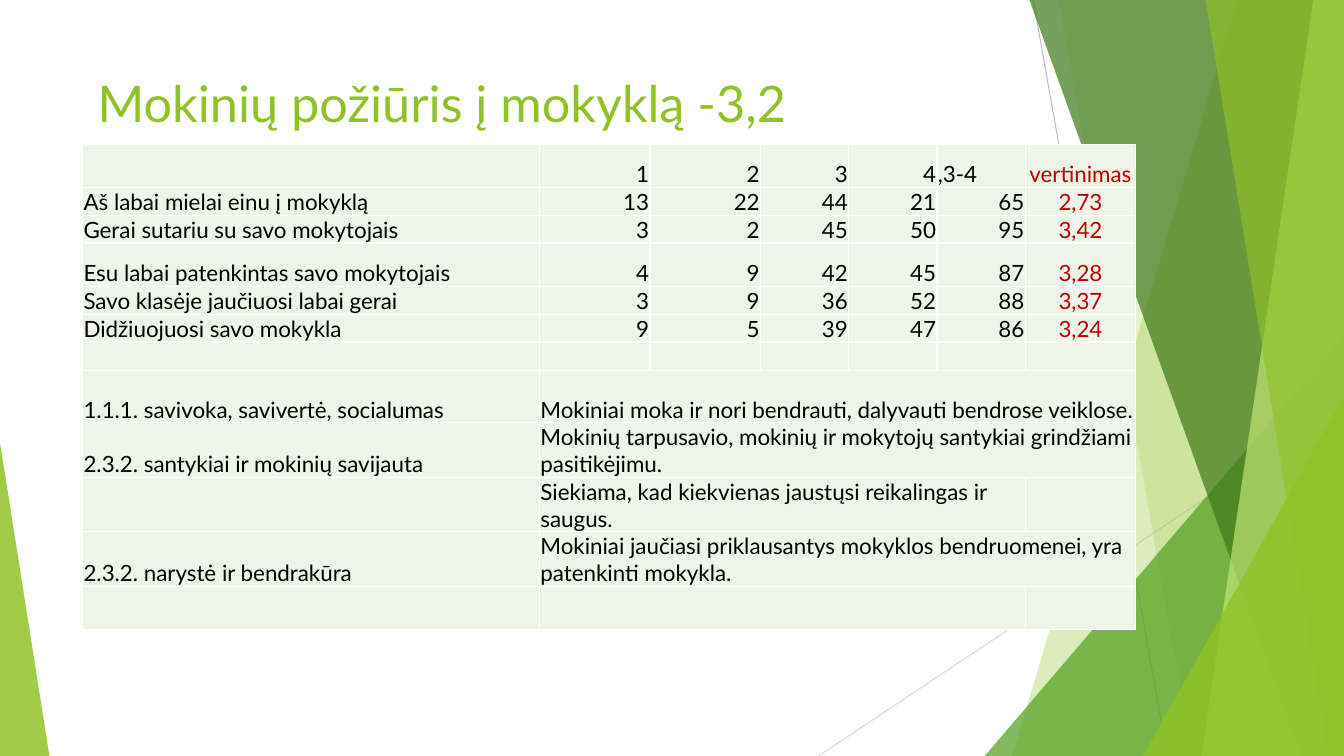
from dataclasses import dataclass

from lxml import etree
from pptx import Presentation
from pptx import util as u
from pptx.dml.color import RGBColor
from pptx.enum import shapes, text
from pptx.oxml import ns

Pt = u.Pt
LIME = RGBColor(0x90, 0xC2, 0x26)
LEAF = RGBColor(0x54, 0xA0, 0x21)
PINE = RGBColor(0x3F, 0x78, 0x19)
PALE = RGBColor(0xC0, 0xE4, 0x74)
MIST = RGBColor(0xEE, 0xF4, 0xE8)
RED = RGBColor(0xC0, 0x00, 0x00)
BLACK = RGBColor(0, 0, 0)
SILVER = RGBColor(0xBF, 0xBF, 0xBF)
ASH = RGBColor(0xD9, 0xD9, 0xD9)
FONT = "Lato"
WIDE, HIGH, TOP = 960, 540, -0.7
LEFT, MID, RIGHT = text.PP_ALIGN.LEFT, text.PP_ALIGN.CENTER, text.PP_ALIGN.RIGHT


@dataclass
class Line:
    start: tuple[float, float]
    end: tuple[float, float]
    color: RGBColor


@dataclass
class Band:
    """A panel reaching the right edge, with a slanted left side."""
    upper: float
    lower: float
    color: RGBColor
    alpha: int


@dataclass
class Wedge:
    """A right triangle standing on the bottom edge."""
    left: float
    top: float
    width: float
    peak: int
    color: RGBColor
    alpha: int


LINES = [
    Line((738, 0), (833.8, HIGH), SILVER),
    Line((WIDE, 290.2), (584.6, HIGH), ASH),
]
DECOR = [
    Band(884.2, 722.9, LIME, 30),
    Band(756, 851.8, LIME, 20),
    Wedge(703.4, 239.8, 256.6, 1, LEAF, 72),
    Band(735.1, 929.5, PINE, 70),
    Band(938.2, 858.2, PALE, 70),
    Band(861.1, 949, LIME, 65),
    Wedge(816.5, 283, 143.5, 1, LIME, 80),
    Wedge(0, 316.1, 35.3, 0, LIME, 85),
]

COLS = [326.4, 79, 79, 63, 63, 63, 79]
TALL, LOW, TWIN = 31, 19, 37.5
HEIGHTS = [TALL, LOW, LOW, TALL, LOW, LOW, LOW, TWIN, TWIN, TWIN, TWIN, TALL]
ROWS = [
    ["", "1", "2", "3", "4", ",3-4", "vertinimas"],
    ["Aš labai mielai einu į mokyklą", "13", "22", "44", "21", "65", "2,73"],
    ["Gerai sutariu su savo mokytojais", "3", "2", "45", "50", "95", "3,42"],
    ["Esu labai patenkintas savo mokytojais", "4", "9", "42", "45", "87", "3,28"],
    ["Savo klasėje jaučiuosi labai gerai", "3", "9", "36", "52", "88", "3,37"],
    ["Didžiuojuosi savo mokykla", "9", "5", "39", "47", "86", "3,24"],
    [],
    ["1.1.1. savivoka, savivertė, socialumas",
     "Mokiniai moka ir nori bendrauti, dalyvauti bendrose veiklose."],
    ["2.3.2. santykiai ir mokinių savijauta",
     "Mokinių tarpusavio, mokinių ir mokytojų santykiai grindžiami pasitikėjimu."],
    ["", "Siekiama, kad kiekvienas jaustųsi reikalingas ir saugus."],
    ["2.3.2. narystė ir bendrakūra",
     "Mokiniai jaučiasi priklausantys mokyklos bendruomenei, yra patenkinti mokykla."],
    [],
]
MERGES = {7: 6, 8: 6, 9: 5, 10: 6, 11: 5}  # row: last column of the span


def write(frame, words: str, size: float = 16, color: RGBColor = BLACK, align=LEFT) -> None:
    para = frame.paragraphs[0]
    para.alignment = align
    if not words:
        etree.SubElement(para._p, ns.qn("a:endParaRPr"), sz=str(size * 100))
        return
    run = para.add_run()
    run.text = words
    run.font.name = FONT
    run.font.size = Pt(size)
    run.font.color.rgb = color


def draw_line(slide, item: Line) -> None:
    line = slide.shapes.add_connector(
        shapes.MSO_CONNECTOR.STRAIGHT, *map(Pt, item.start + item.end))
    line.line.color.rgb = item.color
    line.line.width = Pt(0.75)
    etree.SubElement(line.element.spPr, ns.qn("a:effectLst"))


def draw_decor(slide, item: Band | Wedge) -> None:
    if isinstance(item, Band):
        pen = slide.shapes.build_freeform(Pt(item.upper), Pt(TOP))
        rest = [(WIDE, TOP), (WIDE, HIGH), (item.lower, HIGH)]
        pen.add_line_segments([(Pt(x), Pt(y)) for x, y in rest], close=True)
        shape = pen.convert_to_shape()
    else:
        shape = slide.shapes.add_shape(
            shapes.MSO_SHAPE.ISOSCELES_TRIANGLE, Pt(item.left), Pt(item.top),
            Pt(item.width), Pt(HIGH - item.top))
        shape.adjustments[0] = item.peak
    shape.shadow.inherit = False
    shape.line.fill.background()
    shape.fill.solid()
    shape.fill.fore_color.rgb = item.color
    tint = next(shape.element.iter(ns.qn("a:srgbClr")))
    etree.SubElement(tint, ns.qn("a:alpha"), val=str(item.alpha * 1000))


def style_cell(cell) -> None:
    cell.margin_left = cell.margin_right = cell.margin_top = Pt(0.7)
    cell.margin_bottom = Pt(0)
    cell.vertical_anchor = text.MSO_ANCHOR.BOTTOM
    props = cell._tc.get_or_add_tcPr()
    for side in ("lnL", "lnR", "lnT", "lnB"):
        edge = etree.SubElement(props, ns.qn(f"a:{side}"), w=str(Pt(1)))
        fill = etree.SubElement(edge, ns.qn("a:solidFill"))
        etree.SubElement(fill, ns.qn("a:srgbClr"), val="FFFFFF")
    cell.fill.solid()
    cell.fill.fore_color.rgb = MIST


def draw_table(slide) -> None:
    table = slide.shapes.add_table(
        len(ROWS), len(COLS), Pt(59), Pt(103), Pt(sum(COLS)), Pt(sum(HEIGHTS))).table
    table.first_row = table.horz_banding = False
    for col, width in zip(table.columns, COLS):
        col.width = Pt(width)
    for r, (row, height) in enumerate(zip(ROWS, HEIGHTS)):
        table.rows[r].height = Pt(height)
        for c in range(len(COLS)):
            cell = table.cell(r, c)
            words = row[c] if c < len(row) else ""
            score = c == len(COLS) - 1
            plain = c == 0 or r in MERGES or words.startswith(",")
            style_cell(cell)
            write(cell.text_frame, words, color=RED if score else BLACK,
                  align=MID if score else LEFT if plain else RIGHT)
        if r in MERGES:
            table.cell(r, 1).merge(table.cell(r, MERGES[r]))


def main() -> None:
    deck = Presentation()
    deck.slide_width, deck.slide_height = Pt(WIDE), Pt(HIGH)
    slide = deck.slides.add_slide(deck.slide_layouts[5])

    # Backdrop
    for line in LINES:
        draw_line(slide, line)
    for item in DECOR:
        draw_decor(slide, item)

    # Title, in front of the backdrop
    title = slide.shapes.title
    title.element.getparent().append(title.element)
    title.left, title.top, title.width, title.height = map(Pt, (53.3, 48, 676.8, 104))
    frame = title.text_frame
    frame.auto_size = text.MSO_AUTO_SIZE.NONE
    frame.vertical_anchor = text.MSO_ANCHOR.TOP
    write(frame, " Mokinių požiūris į mokyklą -3,2", size=36, color=LIME)

    # Survey results
    draw_table(slide)
    deck.save("out.pptx")


if __name__ == "__main__":
    main()
